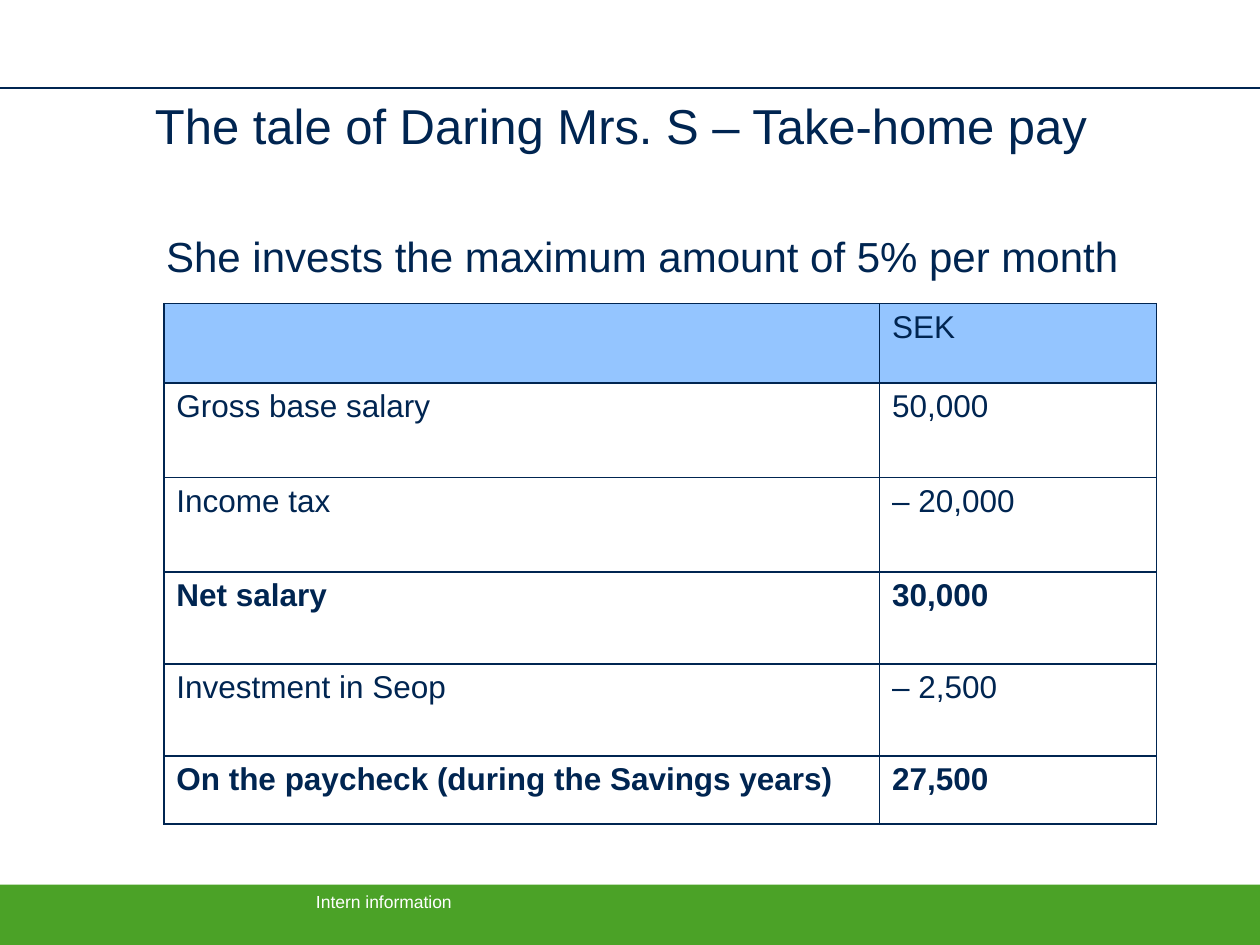
from lxml import etree
from pptx import Presentation
from pptx.dml.color import RGBColor
from pptx.enum import shapes, text
from pptx.oxml.ns import qn
from pptx.util import Inches, Pt

NAVY = RGBColor(0x00, 0x25, 0x51)
GREEN = RGBColor(0x4B, 0xA2, 0x27)
LIGHT_BLUE = RGBColor(0x94, 0xC5, 0xFF)
WHITE = RGBColor(0xFF, 0xFF, 0xFF)

COLUMN_WIDTHS = [5.68, 2.2]
ROW_HEIGHTS = [0.63, 0.75, 0.75, 0.73, 0.73, 0.54]
PAY_ROWS = [
    ("", "SEK"),
    ("Gross base salary", "50,000"),
    ("Income tax", "– 20,000"),
    ("Net salary", "30,000"),
    ("Investment in Seop", "– 2,500"),
    ("On the paycheck (during the Savings years)", "27,500"),
]
TOTAL_ROWS = {3, 5}


def write(frame, words, size=18, color=NAVY, bold=False, spacing=None):
    paragraph = frame.paragraphs[0]
    paragraph.line_spacing = spacing
    run = paragraph.add_run()
    run.text = words
    run.font.name = "Arial"
    run.font.size = Pt(size)
    run.font.bold = bold
    run.font.color.rgb = color


def add_text(slide, box, words, inset=0.1, **style):
    frame = slide.shapes.add_textbox(*map(Inches, box)).text_frame
    frame.word_wrap = True
    frame.vertical_anchor = text.MSO_ANCHOR.TOP
    frame.margin_left = frame.margin_right = Inches(inset)
    frame.margin_top = frame.margin_bottom = Inches(0.05)
    write(frame, words, **style)


def add_footer(slide, left, top, width, height):
    band = slide.shapes.add_shape(
        shapes.MSO_SHAPE.RECTANGLE, *map(Inches, (left, top, width, height)))
    band.shadow.inherit = False
    band.fill.solid()
    band.fill.fore_color.rgb = GREEN
    band.line.fill.background()
    add_text(slide, (left + 2.41, top, 6.13, 0.27), "Intern information",
             size=10, color=WHITE)


def add_header(slide, left, top, width):
    rule = slide.shapes.add_connector(
        shapes.MSO_CONNECTOR.STRAIGHT,
        *map(Inches, (left, top, left + width, top)))
    rule.line.color.rgb = NAVY
    rule.line.width = Pt(1)
    etree.SubElement(rule._element.spPr, qn("a:effectLst"))
    add_text(slide, (left + 1.18, top + 0.06, 8.44, 0.53),
             "The tale of Daring Mrs. S – Take-home pay",
             inset=0.05, size=28, spacing=0.9)


def add_borders(cell):
    properties = cell._tc.get_or_add_tcPr()
    # Borders come before the fill in a cell's properties
    for position, side in enumerate(("a:lnL", "a:lnR", "a:lnT", "a:lnB")):
        border = etree.Element(qn(side), w=str(Pt(1)))
        fill = etree.SubElement(border, qn("a:solidFill"))
        etree.SubElement(fill, qn("a:srgbClr"), val=str(NAVY))
        properties.insert(position, border)


def add_pay_table(slide, left, top):
    box = (left, top, sum(COLUMN_WIDTHS), sum(ROW_HEIGHTS))
    table = slide.shapes.add_table(
        len(PAY_ROWS), len(COLUMN_WIDTHS), *map(Inches, box)).table
    table.first_row = table.horz_banding = False
    for column, width in zip(table.columns, COLUMN_WIDTHS):
        column.width = Inches(width)
    for row, height in zip(table.rows, ROW_HEIGHTS):
        row.height = Inches(height)

    for row_index, entries in enumerate(PAY_ROWS):
        for column_index, entry in enumerate(entries):
            cell = table.cell(row_index, column_index)
            if row_index == 0:
                cell.fill.solid()
                cell.fill.fore_color.rgb = LIGHT_BLUE
            else:
                cell.fill.background()
            add_borders(cell)
            if entry:
                write(cell.text_frame, entry, bold=row_index in TOTAL_ROWS)


def main():
    deck = Presentation()
    deck.slide_width, deck.slide_height = Inches(10), Inches(7.5)
    slide = deck.slides.add_slide(deck.slide_layouts[6])
    add_footer(slide, 0, 7.02, 10, 0.48)
    add_header(slide, 0, 0.7, 10)
    # Lead-in to the table
    add_text(slide, (1.22, 1.78, 8.43, 0.91),
             "She invests the maximum amount of 5% per month", size=24)
    add_pay_table(slide, 1.3, 2.41)
    deck.save("out.pptx")


if __name__ == "__main__":
    main()
